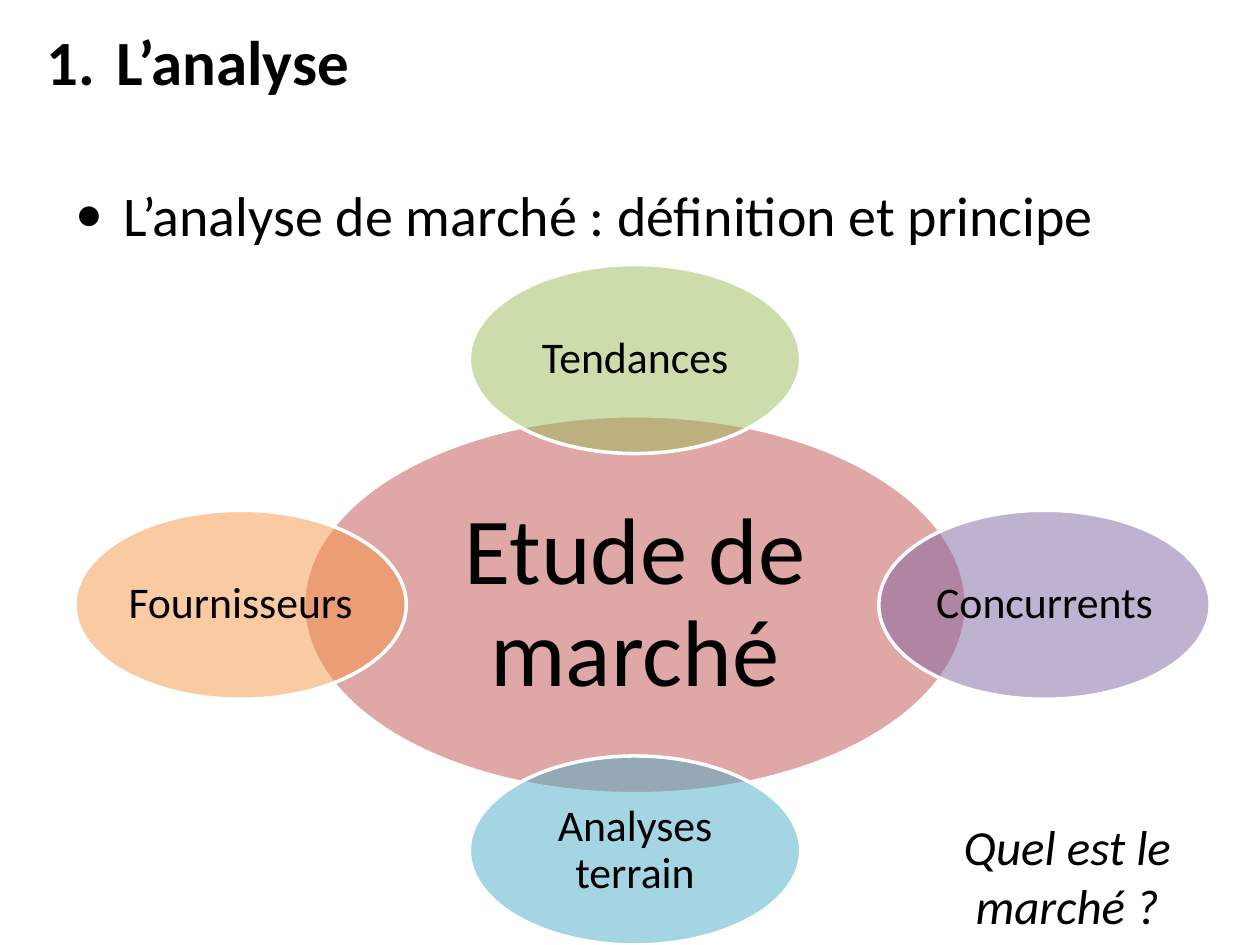
"""Build the market analysis slide with its five overlapping ellipses."""
from lxml.etree import SubElement
from pptx import Presentation
from pptx.dml.color import RGBColor
from pptx.enum.shapes import MSO_SHAPE
from pptx.enum.text import MSO_ANCHOR, PP_ALIGN
from pptx.oxml.ns import qn
from pptx.util import Inches, Pt

TITLE = "L’analyse"
SUBJECT = "L’analyse de marché : définition et principe"
QUESTION = "Quel est le marché ?"
CENTER = (5.04, 4.8)
HUB = ("Etude de marché", "C0504D")
HUB_SIZE = (5.26, 3)
SATELLITE_SIZE = (2.63, 1.5)
SATELLITES = [
    ("Tendances", "9BBB59", 0, -1.95),
    ("Concurrents", "8064A2", 3.25, 0),
    ("Analyses terrain", "4BACC6", 0, 1.95),
    ("Fournisseurs", "F79646", -3.13, 0),
]


def color(value):
    return RGBColor.from_string(value)


def write(shape, text, size, bold=False, italic=False, align=PP_ALIGN.LEFT,
          anchor=MSO_ANCHOR.TOP, inset=None, line_spacing=None,
          bullet=None, hanging=0):
    frame = shape.text_frame
    frame.word_wrap = True
    frame.vertical_anchor = anchor
    if inset is not None:
        frame.margin_left = frame.margin_right = Inches(inset)
        frame.margin_top = frame.margin_bottom = Inches(inset)
    para = frame.paragraphs[0]
    para.alignment = align
    if line_spacing:
        para.line_spacing = line_spacing
    if bullet:
        tag, attributes = bullet
        properties = para._p.get_or_add_pPr()
        properties.set("marL", str(Inches(hanging)))
        properties.set("indent", str(-Inches(hanging)))
        SubElement(properties, qn("a:buFont"), typeface="Calibri")
        SubElement(properties, qn(tag), **attributes)
    span = para.add_run()
    span.text = text
    span.font.name = "Calibri"
    span.font.size = Pt(size)
    span.font.bold = bold
    span.font.italic = italic
    span.font.color.rgb = color("000000")


def add_text(page, place, text, **style):
    box = page.shapes.add_textbox(*map(Inches, place))
    write(box, text, **style)


def add_ellipse(page, text, fill, size, font_size, inset, shift=(0, 0)):
    width, height = size
    left = CENTER[0] + shift[0] - width / 2
    top = CENTER[1] + shift[1] - height / 2
    ellipse = page.shapes.add_shape(
        MSO_SHAPE.OVAL, *map(Inches, (left, top, width, height)))
    ellipse.shadow.inherit = False
    ellipse.fill.solid()
    ellipse.fill.fore_color.rgb = color(fill)
    tint = ellipse._element.spPr.find(qn("a:solidFill"))[0]
    SubElement(tint, qn("a:alpha"), val="50000")
    ellipse.line.color.rgb = color("FFFFFF")
    ellipse.line.width = Pt(2)
    write(ellipse, text, font_size, align=PP_ALIGN.CENTER,
          anchor=MSO_ANCHOR.MIDDLE, inset=inset, line_spacing=0.9)


def main():
    deck = Presentation()
    deck.slide_width, deck.slide_height = Inches(10), Inches(7.5)
    page = deck.slides.add_slide(deck.slide_layouts[6])
    add_text(page, (0.27, 0.13, 9.06, 1.25), TITLE, size=36, bold=True,
             bullet=("a:buAutoNum", {"type": "arabicPeriod"}), hanging=0.56)
    add_text(page, (0.5, 1.38, 9, 5.32), SUBJECT, size=32,
             bullet=("a:buChar", {"char": "•"}), hanging=0.38)
    add_ellipse(page, *HUB, HUB_SIZE, font_size=54, inset=0.07)
    for text, fill, across, down in SATELLITES:
        add_ellipse(page, text, fill, SATELLITE_SIZE, font_size=25,
                    inset=0.03, shift=(across, down))
    add_text(page, (7.05, 6.43, 2.84, 1.04), QUESTION, size=28, italic=True,
             align=PP_ALIGN.CENTER)
    deck.save("out.pptx")


if __name__ == "__main__":
    main()
